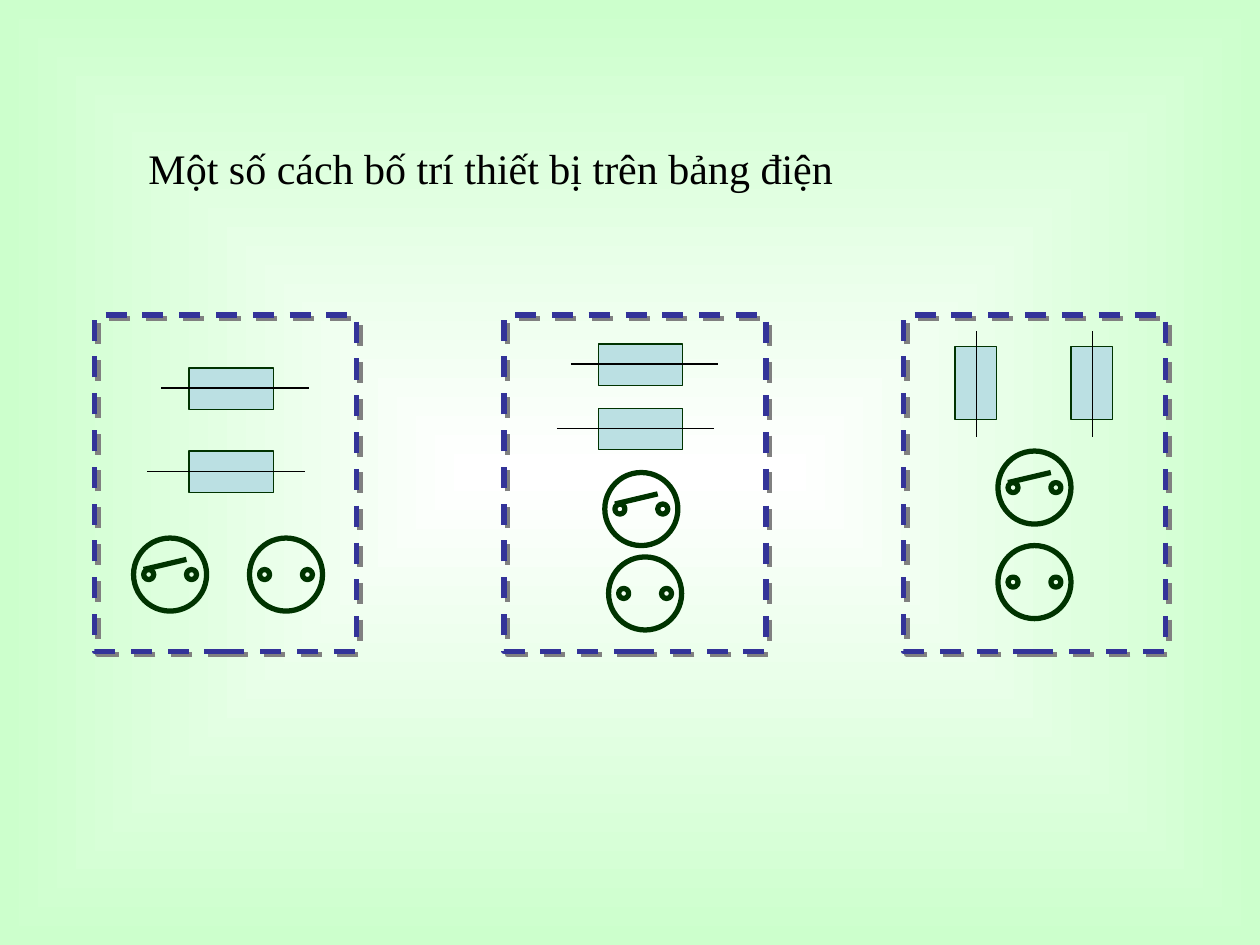
from dataclasses import dataclass

from lxml import etree
from pptx import Presentation
from pptx.dml.color import RGBColor
from pptx.enum.dml import MSO_LINE
from pptx.enum.shapes import MSO_CONNECTOR, MSO_SHAPE
from pptx.enum.text import MSO_AUTO_SIZE
from pptx.oxml.ns import qn
from pptx.util import Inches, Pt

RECT = MSO_SHAPE.RECTANGLE
OVAL = MSO_SHAPE.OVAL
NODE = MSO_SHAPE.FLOWCHART_CONNECTOR
LINE = MSO_CONNECTOR.STRAIGHT
DASH = MSO_LINE.DASH
GROW = MSO_AUTO_SIZE.SHAPE_TO_FIT_TEXT


@dataclass(frozen=True)
class Theme:
    core: str = "FFFFFF"
    edge: str = "CCFFCC"
    frame: str = "333399"
    shade: str = "808080"
    fuse: str = "BBE0E3"
    green: str = "003300"
    ink: str = "000000"
    font: str = "Times New Roman"
    title: float = 24
    thick: float = 3
    thin: float = 0.75


THEME = Theme()


def color(code):
    return RGBColor.from_string(code)


def add_node(parent, tag, **attrs):
    return etree.SubElement(parent, qn(tag), {k: str(v) for k, v in attrs.items()})


def add_back(slide):
    fill = slide.background.fill
    fill.gradient()
    for stop, code in zip(fill.gradient_stops, (THEME.core, THEME.edge)):
        stop.color.rgb = color(code)
    # Let the colours spread from the centre
    grad = slide.element.find(".//" + qn("a:gradFill"))
    grad.remove(grad.find(qn("a:lin")))
    way = add_node(grad, "a:path", path="shape")
    add_node(way, "a:fillToRect", l=50000, t=50000, r=50000, b=50000)


def add_text(slide, text, left, top, width, height, *, size, font, ink, before):
    box = slide.shapes.add_textbox(*map(Inches, (left, top, width, height)))
    frame = box.text_frame
    frame.word_wrap = True
    frame.auto_size = GROW
    para = frame.paragraphs[0]
    space = add_node(para._p.get_or_add_pPr(), "a:spcBef")
    add_node(space, "a:spcPct", val=before * 1000)
    run = para.add_run()
    run.text = text
    run.font.size = Pt(size)
    run.font.name = font
    run.font.color.rgb = color(ink)


def add_form(shapes, kind, left, top, width, height, line, weight, fill=None):
    form = shapes.add_shape(kind, *map(Inches, (left, top, width, height)))
    form.shadow.inherit = False
    if fill:
        form.fill.solid()
        form.fill.fore_color.rgb = color(fill)
    else:
        form.fill.background()
    form.line.color.rgb = color(line)
    form.line.width = Pt(weight)
    return form


def add_line(shapes, x1, y1, x2, y2, ink, weight):
    line = shapes.add_connector(LINE, *map(Inches, (x1, y1, x2, y2)))
    line.line.color.rgb = color(ink)
    line.line.width = Pt(weight)
    add_node(line._element.spPr, "a:effectLst")


def add_board(slide, left):
    board = add_form(slide.shapes, RECT, left, 2.5, 2.08, 2.67, THEME.frame, THEME.thick)
    board.line.dash_style = DASH
    effects = board._element.spPr.find(qn("a:effectLst"))
    shade = add_node(effects, "a:outerShdw", dist=Pt(2.8), dir=45 * 60000,
                     algn="ctr", rotWithShape=0)
    add_node(shade, "a:srgbClr", val=THEME.shade)


def add_fuse(slide, box, wire):
    add_form(slide.shapes, RECT, *box, THEME.green, THEME.thin, THEME.fuse)
    add_line(slide.shapes, *wire, THEME.ink, THEME.thin)


def add_flat(slide, left, top, start, end):
    mid = top + 0.16
    add_fuse(slide, (left, top, 0.67, 0.33), (start, mid, end, mid))


def add_tall(slide, left):
    mid = left + 0.17
    add_fuse(slide, (left, 2.75, 0.33, 0.58), (mid, 2.63, mid, 3.47))


def add_socket(slide, left, top, lever=False):
    """Round device with two pins; a lever makes it a switch."""
    shapes = slide.shapes.add_group_shape().shapes
    style = THEME.green, THEME.thick
    pin, end, row = left + 0.08, left + 0.42, top + 0.25
    add_form(shapes, OVAL, left, top, 0.58, 0.58, *style)
    for x in (pin, end):
        add_form(shapes, NODE, x, row, 0.08, 0.08, *style)
    if lever:
        add_line(shapes, pin, row, end, row - 0.08, *style)


def main():
    deck = Presentation()
    deck.slide_width, deck.slide_height = Inches(10), Inches(7.5)
    slide = deck.slides.add_slide(deck.slide_layouts[6])
    add_back(slide)

    # Title
    add_text(slide, "Một số cách bố trí thiết bị trên bảng điện", 1.08, 1.08, 5.92, 0.5,
             size=THEME.title, font=THEME.font, ink=THEME.ink, before=50)

    # Left board: fuses stacked, switch beside socket
    add_board(slide, 0.75)
    add_flat(slide, 1.5, 2.92, 1.28, 2.45)
    add_flat(slide, 1.5, 3.58, 1.17, 2.42)
    add_socket(slide, 1.06, 4.27, lever=True)
    add_socket(slide, 1.98, 4.27)

    # Middle board: everything stacked
    add_board(slide, 4)
    add_flat(slide, 4.75, 2.73, 4.53, 5.7)
    add_flat(slide, 4.75, 3.24, 4.42, 5.67)
    add_socket(slide, 4.8, 3.75, lever=True)
    add_socket(slide, 4.83, 4.42)

    # Right board: upright fuses above switch and socket
    add_board(slide, 7.17)
    for left in (7.58, 8.5):
        add_tall(slide, left)
    add_socket(slide, 7.92, 3.58, lever=True)
    add_socket(slide, 7.92, 4.33)

    deck.save("out.pptx")


if __name__ == "__main__":
    main()
